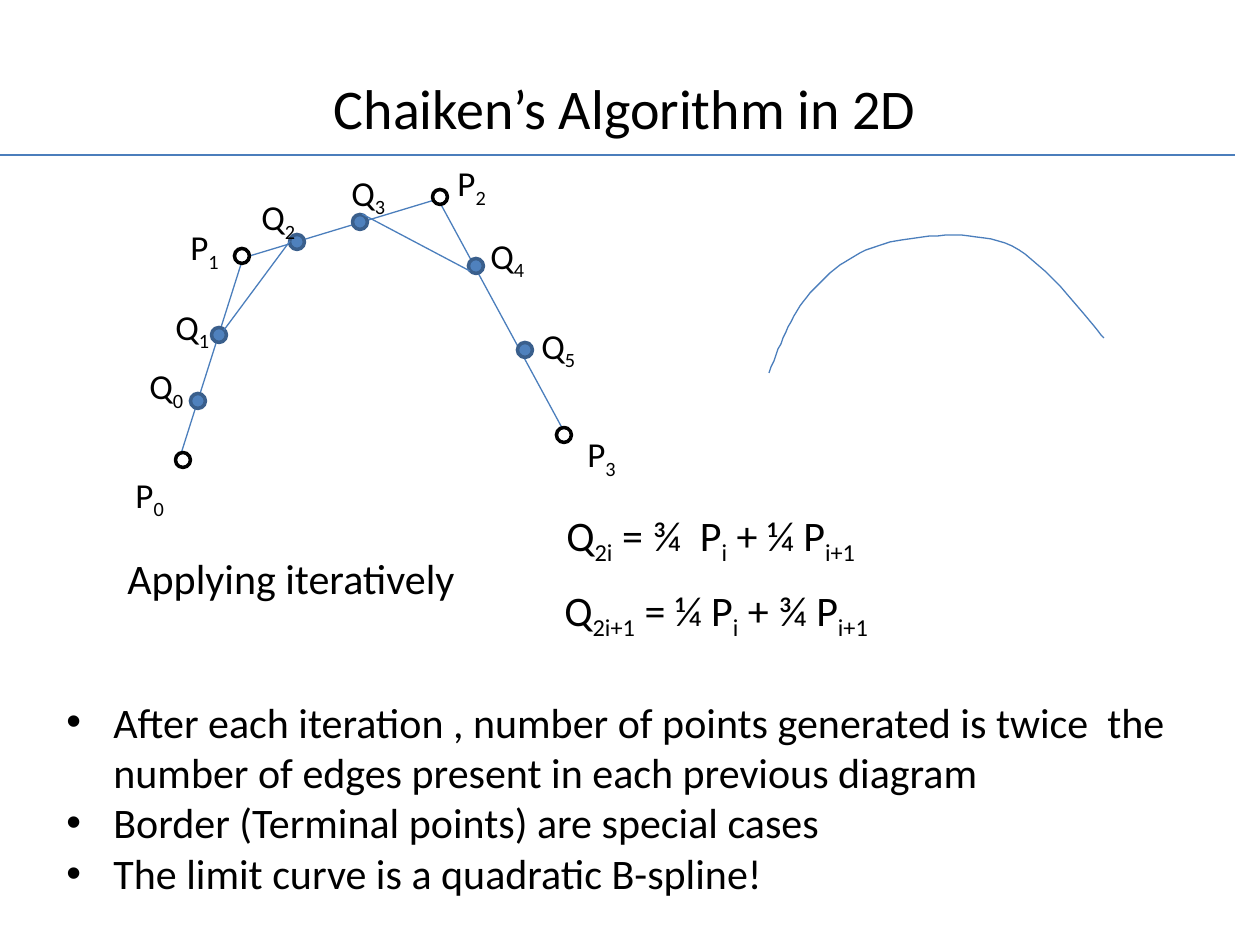
import pptx
import pptx.dml.color
import pptx.enum.shapes
import pptx.enum.text
import pptx.oxml.ns
import pptx.util
from lxml import etree

PX = 914400 / 126
FONT = "Calibri"
BLACK = pptx.dml.color.RGBColor(0, 0, 0)
WHITE = pptx.dml.color.RGBColor(255, 255, 255)
BLUE = pptx.dml.color.RGBColor(0x4F, 0x81, 0xBD)
EDGE = pptx.dml.color.RGBColor(0x3A, 0x5F, 0x8C)
STROKE = pptx.dml.color.RGBColor(0x4B, 0x7E, 0xBC)

DOT = 15
P_DOTS = [(183, 460), (242, 256), (440, 197), (564, 435)]
Q_DOTS = [(198, 401), (219, 335), (297, 242), (360, 222), (476, 266), (525, 350)]
P_TAGS = [(123, 467), (178, 219), (445, 155), (575, 426)]
Q_TAGS = [(137, 358), (163, 299), (249, 189), (339, 165), (478, 228), (529, 318)]
EDGES = [(180, 457), (243, 258), (438, 199), (567, 437)]
CUTS = [((290, 241), (224, 330)), ((362, 214), (470, 271))]
CURVE = [(769, 373), (781, 341), (793, 310), (814, 289), (834, 266), (862, 247), (896, 241),
         (929, 234), (977, 231), (1012, 246), (1047, 263), (1091, 324), (1104, 338)]
NOTES = [
    "After each iteration , number of points generated is twice  the  number of edges "
    "present in each previous diagram",
    "Border (Terminal points) are special cases",
    "The limit curve is a quadratic B-spline!",
]


def emu(*values):
    return [pptx.util.Emu(round(v * PX)) for v in values]


def add_line(slide, start, end):
    kind = pptx.enum.shapes.MSO_CONNECTOR.STRAIGHT
    line = slide.shapes.add_connector(kind, *emu(*start, *end))
    line.line.color.rgb = STROKE
    line.line.width = pptx.util.Pt(0.75)
    etree.SubElement(line._element.spPr, pptx.oxml.ns.qn("a:effectLst"))


def add_dot(slide, center, fill, edge):
    x, y = center
    kind = pptx.enum.shapes.MSO_SHAPE.OVAL
    dot = slide.shapes.add_shape(kind, *emu(x - DOT / 2, y - DOT / 2, DOT, DOT))
    dot.shadow.inherit = False
    dot.fill.solid()
    dot.fill.fore_color.rgb = fill
    dot.line.color.rgb = edge
    dot.line.width = pptx.util.Pt(2)


def bezier(a, b, c, d, t):
    s = 1 - t
    return tuple(s**3 * i + 3 * s * s * t * j + 3 * s * t * t * k + t**3 * m
                 for i, j, k, m in zip(a, b, c, d))


def add_curve(slide, knots, steps=16):
    points = [bezier(*knots[i:i + 4], n / steps)
              for i in range(0, len(knots) - 1, 3) for n in range(1, steps + 1)]
    pen = slide.shapes.build_freeform(*knots[0], scale=PX)
    pen.add_line_segments(points, close=False)
    curve = pen.convert_to_shape()
    curve.shadow.inherit = False
    curve.fill.background()
    curve.line.color.rgb = STROKE
    curve.line.width = pptx.util.Pt(0.75)


def set_bullet(para, indent):
    props = para._p.get_or_add_pPr()
    props.set("marL", str(indent))
    props.set("indent", str(-indent))
    etree.SubElement(props, pptx.oxml.ns.qn("a:buFont"), typeface="Arial")
    etree.SubElement(props, pptx.oxml.ns.qn("a:buChar"), char="•")


def write(shape, lines, size=24, wrap=False, bullet=False, align="LEFT"):
    """Fill a shape with text in which every second part between bars is a subscript."""
    frame = shape.text_frame
    frame.word_wrap = wrap
    frame.auto_size = pptx.enum.text.MSO_AUTO_SIZE.NONE
    frame.vertical_anchor = pptx.enum.text.MSO_ANCHOR.TOP
    for i, line in enumerate(lines):
        para = frame.add_paragraph() if i else frame.paragraphs[0]
        para.alignment = getattr(pptx.enum.text.PP_ALIGN, align)
        if bullet:
            set_bullet(para, emu(47)[0])
        for n, part in enumerate(line.split("|")):
            if not part:
                continue
            run = para.add_run()
            run.text = part
            run.font.name = FONT
            run.font.size = pptx.util.Pt(size)
            run.font.color.rgb = BLACK
            if n % 2:
                run._r.get_or_add_rPr().set("baseline", "-25000")


def add_text(slide, box, lines, **style):
    write(slide.shapes.add_textbox(*emu(*box)), lines, **style)


def add_title(slide, box, text):
    title = slide.shapes.title
    title.left, title.top, title.width, title.height = emu(*box)
    write(title, [text], size=32, align="CENTER")


def add_tags(slide, name, places, width):
    for i, place in enumerate(places):
        add_text(slide, (*place, width, 55), [f"{name}|{i}"], size=20)


def main():
    deck = pptx.Presentation()
    deck.slide_width, deck.slide_height = emu(1260, 945)
    slide = deck.slides.add_slide(deck.slide_layouts[5])
    add_title(slide, (318, 67, 614, 81), "Chaiken’s Algorithm in 2D")
    add_line(slide, (0, 155), (1235, 155))
    for start, end in zip(EDGES, EDGES[1:]):
        add_line(slide, start, end)
    for center in Q_DOTS:
        add_dot(slide, center, BLUE, EDGE)
    for center in P_DOTS:
        add_dot(slide, center, WHITE, BLACK)
    for start, end in CUTS:
        add_line(slide, start, end)
    add_tags(slide, "P", P_TAGS, 55)
    add_tags(slide, "Q", Q_TAGS, 62)
    add_curve(slide, CURVE)
    add_text(slide, (554, 503, 334, 63), ["Q|2i| = ¾  P|i| + ¼ P|i+1"])
    add_text(slide, (552, 578, 353, 63), ["Q|2i+1| = ¼ P|i| + ¾ P|i+1"])
    add_text(slide, (115, 546, 357, 63), ["Applying iteratively"])
    add_text(slide, (54, 690, 1142, 217), NOTES, wrap=True, bullet=True)
    deck.save("out.pptx")


if __name__ == "__main__":
    main()
